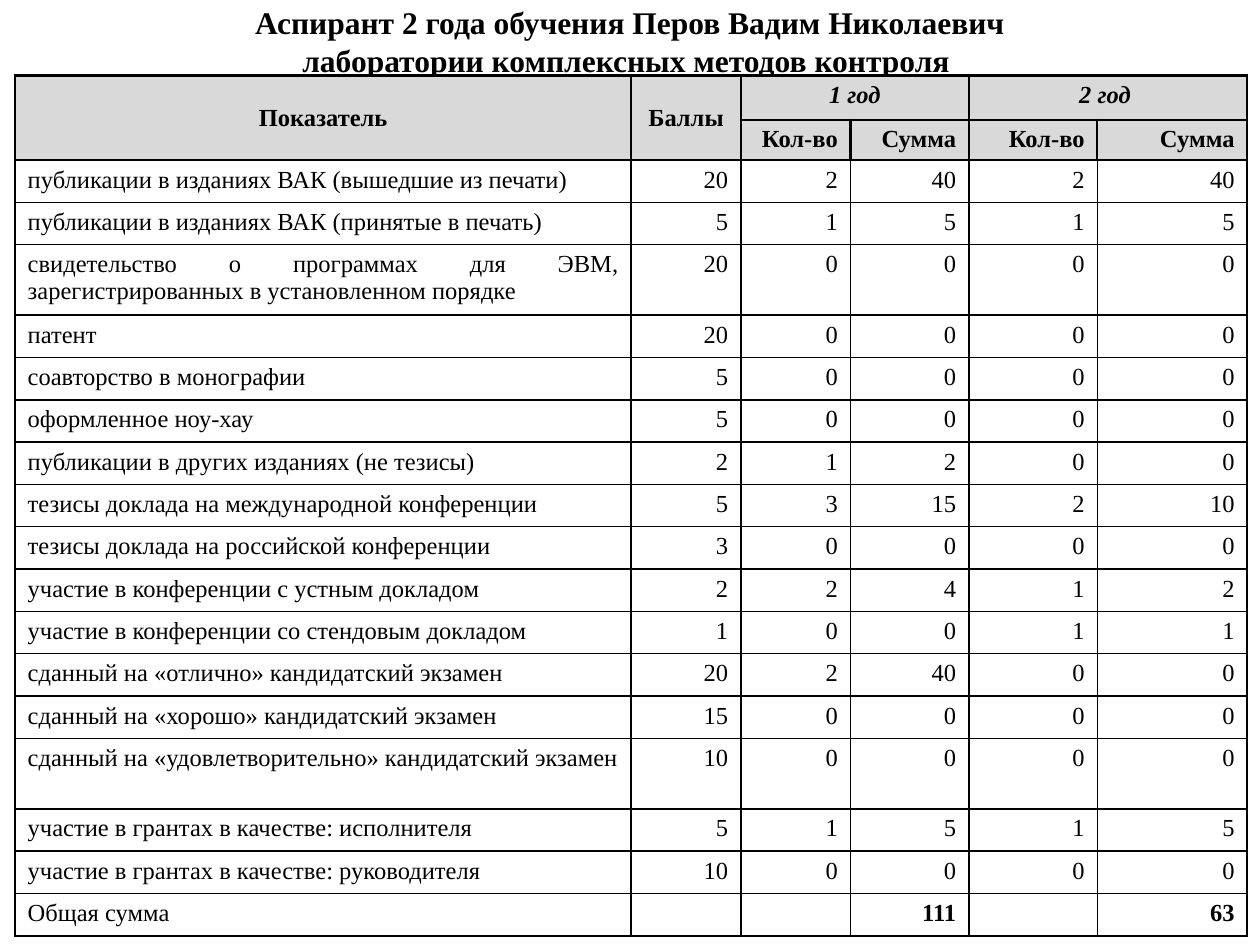
from lxml import etree
from pptx import Presentation
from pptx import util as u
from pptx.dml.color import RGBColor
from pptx.enum import text
from pptx.oxml import ns

INK = {"text": "000000", "head": "D9D9D9"}
FONT = "Times New Roman"
AL = text.PP_ALIGN
TITLE = ["Аспирант 2 года обучения Перов Вадим Николаевич",
         "лаборатории комплексных методов контроля "]
COLS = [4.89, 0.87, 0.87, 0.94, 1.02, 1.19]
HEADS = [["Показатель", "Баллы", "1 год", "", "2 год ", ""],
         ["", "", "Кол-во", "Сумма", "Кол-во", "Сумма"]]
ITEMS = [
    ("публикации в изданиях ВАК (вышедшие из печати)", 20, 2, 2),
    ("публикации в изданиях ВАК (принятые в печать)", 5, 1, 1),
    ("свидетельство о программах для ЭВМ, "
     "зарегистрированных в установленном порядке", 20, 0, 0),
    ("патент", 20, 0, 0),
    ("соавторство в монографии", 5, 0, 0),
    ("оформленное ноу-хау", 5, 0, 0),
    ("публикации в других изданиях (не тезисы)", 2, 1, 0),
    ("тезисы доклада на международной конференции", 5, 3, 2),
    ("тезисы доклада на российской конференции", 3, 0, 0),
    ("участие в конференции с устным докладом", 2, 2, 1),
    ("участие в конференции со стендовым докладом", 1, 0, 1),
    ("сданный на «отлично» кандидатский экзамен", 20, 2, 0),
    ("сданный на «хорошо» кандидатский экзамен", 15, 0, 0),
    ("сданный на «удовлетворительно» кандидатский экзамен", 10, 0, 0),
    ("участие в грантах в качестве: исполнителя", 5, 1, 1),
    ("участие в грантах в качестве: руководителя", 10, 0, 0),
]
TALL = (4, 15)
HIGH = 6.83


def add_run(para, words, size, bold=False, slant=False):
    """Add one styled run to a paragraph."""
    run = para.add_run()
    run.text = words
    font = run.font
    font.name, font.size = FONT, u.Pt(size)
    font.bold, font.italic = bold, slant
    font.color.rgb = RGBColor.from_string(INK["text"])


def add_title(slide):
    """Fill and place the two-line title."""
    box = slide.shapes.title
    box.left, box.top = u.Inches(0.75), u.Inches(-0.03)
    box.width, box.height = u.Inches(8.5), u.Inches(0.71)
    frame = box.text_frame
    frame.word_wrap = True
    frame.auto_size = text.MSO_AUTO_SIZE.NONE
    frame.vertical_anchor = text.MSO_ANCHOR.MIDDLE
    para = frame.paragraphs[0]
    para.alignment = AL.CENTER
    add_run(para, TITLE[0], 18, bold=True)
    para.add_line_break()
    add_run(para, TITLE[1], 18, bold=True)


def set_edges(cell, width):
    """Draw all four borders of a cell."""
    props = cell._tc.get_or_add_tcPr()
    for spot, side in enumerate(("lnL", "lnR", "lnT", "lnB")):
        line = etree.Element(ns.qn("a:" + side), w=str(u.Pt(width)))
        fill = etree.SubElement(line, ns.qn("a:solidFill"))
        etree.SubElement(fill, ns.qn("a:srgbClr"), val=INK["text"])
        props.insert(spot, line)


def fill_cell(cell, words, align, head=False, bold=False, slant=False):
    """Write and style one table cell."""
    if head:
        cell.fill.solid()
        cell.fill.fore_color.rgb = RGBColor.from_string(INK["head"])
    else:
        cell.fill.background()
    set_edges(cell, 1.5 if head else 1)
    para = cell.text_frame.paragraphs[0]
    para.alignment = align
    if words:
        add_run(para, words, 14, bold, slant)
    else:
        etree.SubElement(para._p, ns.qn("a:endParaRPr"), sz="1400")


def add_head(table):
    """Build the two merged header rows."""
    for row, heads in enumerate(HEADS):
        for col, words in enumerate(heads):
            cell = table.cell(row, col)
            fill_cell(cell, words, AL.RIGHT if row else AL.CENTER,
                      head=True, bold=True, slant=row == 0 and col > 1)
    for col in (0, 1):
        cell = table.cell(0, col)
        cell.merge(table.cell(1, col))
        cell.vertical_anchor = text.MSO_ANCHOR.MIDDLE
    for col in (2, 4):
        table.cell(0, col).merge(table.cell(0, col + 1))


def add_body(table):
    """Fill the score rows and the totals."""
    rows = [(name, pts, one, pts * one, two, pts * two)
            for name, pts, one, two in ITEMS]
    first, second = (sum(row[col] for row in rows) for col in (3, 5))
    rows.append(("Общая сумма", "", "", first, "", second))
    for y, row in enumerate(rows, len(HEADS)):
        last = y == len(rows) + 1
        for x, value in enumerate(row):
            fill_cell(table.cell(y, x), str(value),
                      AL.RIGHT if x else AL.JUSTIFY, bold=last and x > 0)


def add_grid(slide):
    """Add the score table with its sizes."""
    count = len(HEADS) + len(ITEMS) + 1
    table = slide.shapes.add_table(
        count, len(COLS), u.Inches(0.12), u.Inches(0.6),
        u.Inches(sum(COLS)), u.Inches(HIGH)).table
    table.horz_banding = False
    for col, width in zip(table.columns, COLS):
        col.width = u.Inches(width)
    sizes = {0: 0.35, 1: 0.32, **dict.fromkeys(TALL, 0.56)}
    rest = (HIGH - sum(sizes.values())) / (count - len(sizes))
    for y, row in enumerate(table.rows):
        row.height = u.Inches(sizes.get(y, rest))
    add_head(table)
    add_body(table)


def main():
    """Build and save the slide."""
    deck = Presentation()
    deck.slide_width, deck.slide_height = u.Inches(10), u.Inches(7.5)
    slide = deck.slides.add_slide(deck.slide_layouts[0])
    sub = slide.placeholders[1].element
    sub.getparent().remove(sub)
    add_title(slide)
    add_grid(slide)
    deck.save("out.pptx")


if __name__ == "__main__":
    main()
